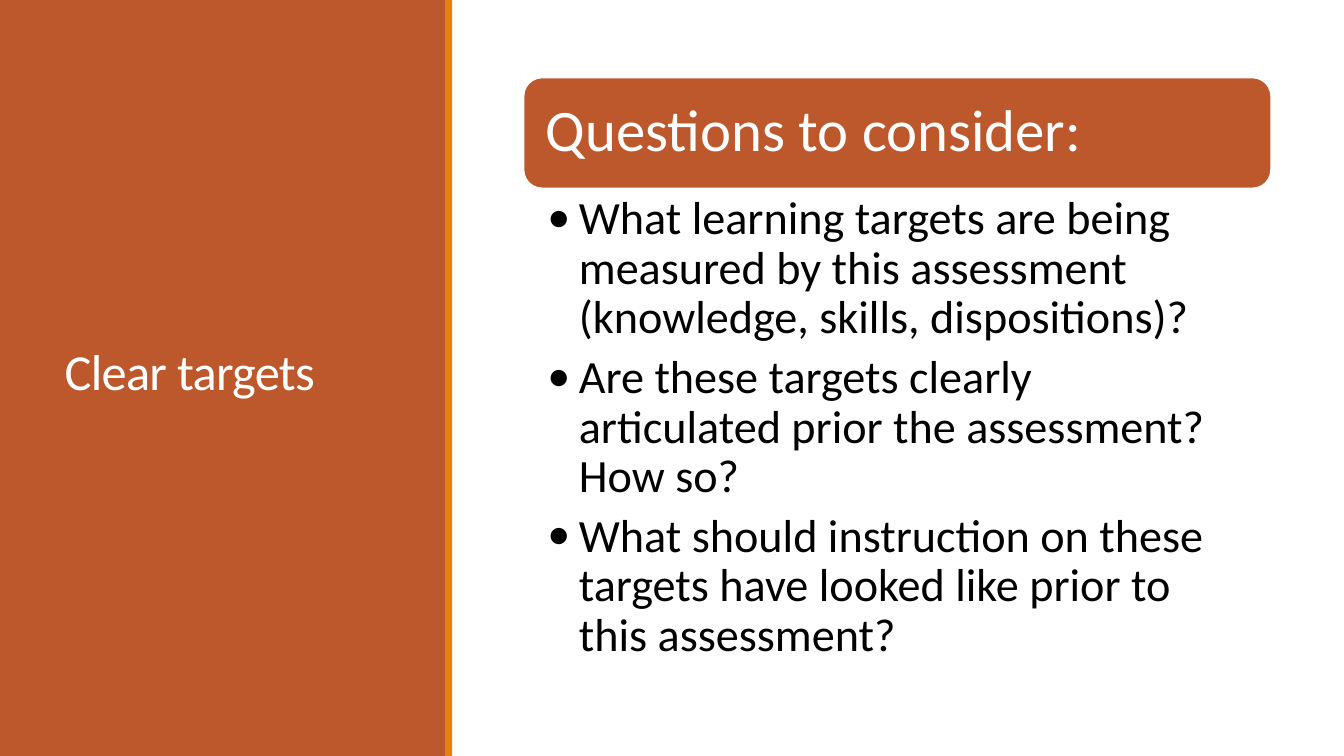
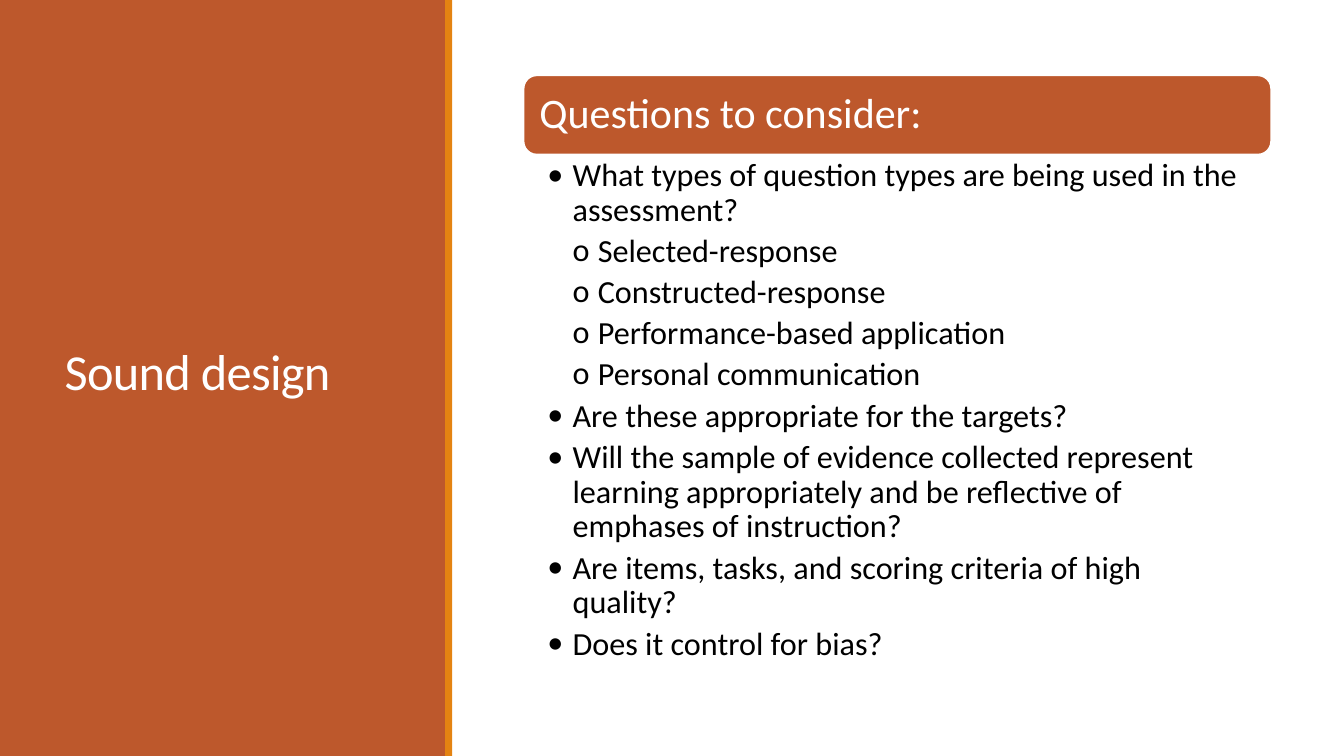
import pptx
import pptx.dml.color
import pptx.enum.shapes
import pptx.enum.text
import pptx.util
from lxml import etree
from pptx.oxml.ns import qn
from pptx.util import Pt

# Shared look
SLIDE_WIDTH, SLIDE_HEIGHT = 960, 540
RUST, ORANGE, WHITE, BLACK = "BD582C", "E48312", "FFFFFF", "000000"
FONT = "Calibri"
PANEL_WIDTH = 319
STRIPE_LEFT, STRIPE_WIDTH = 318, 5
CONTENT_LEFT, CONTENT_WIDTH = 374, 534
HEADING = "Questions to consider:"
BULLETS = "•o"  # one symbol per list level

# Content: questions are (level, text)
SLIDES = [
    {
        "title": "Clear targets",
        "heading": {"top": 55.4, "height": 79.2, "size": 42, "inset": 12},
        "list": {"height": 356, "size": 33, "indent": 22.5, "right": 24, "inset": 4.2},
        "questions": [
            (0, "What learning targets are being measured by this assessment "
                "(knowledge, skills, dispositions)?"),
            (0, "Are these targets clearly articulated prior the assessment? How so?"),
            (0, "What should instruction on these targets have looked like prior to "
                "this assessment?"),
        ],
    },
    {
        "title": "Sound design",
        "heading": {"top": 53.8, "height": 56.6, "size": 30, "inset": 8.6},
        "list": {"height": 381.6, "size": 23, "indent": 18, "right": 16.4, "inset": 2.9},
        "questions": [
            (0, "What types of question types are being used in the assessment?"),
            (1, "Selected-response"),
            (1, "Constructed-response"),
            (1, "Performance-based application"),
            (1, "Personal communication"),
            (0, "Are these appropriate for the targets?"),
            (0, "Will the sample of evidence collected represent learning "
                "appropriately and be reflective of emphases of instruction?"),
            (0, "Are items, tasks, and scoring criteria of high quality?"),
            (0, "Does it control for bias?"),
        ],
    },
]


def color(hex_code):
    return pptx.dml.color.RGBColor.from_string(hex_code)


def place(shape, left, top, width, height):
    shape.left, shape.top = Pt(left), Pt(top)
    shape.width, shape.height = Pt(width), Pt(height)


def set_frame(frame, anchor, left, top, right, bottom):
    frame.word_wrap = True
    frame.auto_size = pptx.enum.text.MSO_AUTO_SIZE.NONE
    frame.vertical_anchor = anchor
    frame.margin_left, frame.margin_top = Pt(left), Pt(top)
    frame.margin_right, frame.margin_bottom = Pt(right), Pt(bottom)


def style(paragraph, size, hex_code, line_spacing=0.9, space_after=0):
    paragraph.alignment = pptx.enum.text.PP_ALIGN.LEFT
    paragraph.line_spacing = line_spacing
    paragraph.space_before = Pt(0)
    paragraph.space_after = Pt(space_after)
    paragraph.font.name = FONT
    paragraph.font.size = Pt(size)
    paragraph.font.color.rgb = color(hex_code)


def set_bullet(paragraph, symbol, margin, hanging):
    properties = paragraph._p.get_or_add_pPr()
    properties.set("marL", str(Pt(margin)))
    properties.set("indent", str(-Pt(hanging)))
    font = etree.Element(qn("a:buFont"), typeface=FONT)
    character = etree.Element(qn("a:buChar"), char=symbol)
    run_defaults = properties.find(qn("a:defRPr"))
    run_defaults.addprevious(font)
    run_defaults.addprevious(character)


def add_filled(slide, preset, hex_code, left, top, width, height):
    shape = slide.shapes.add_shape(preset, Pt(left), Pt(top), Pt(width), Pt(height))
    shape.shadow.inherit = False
    shape.fill.solid()
    shape.fill.fore_color.rgb = color(hex_code)
    shape.line.fill.background()
    return shape


def add_side_panel(slide):
    rectangle = pptx.enum.shapes.MSO_SHAPE.RECTANGLE
    panel = add_filled(slide, rectangle, RUST, 0, 0, PANEL_WIDTH, SLIDE_HEIGHT)
    add_filled(slide, rectangle, ORANGE, STRIPE_LEFT, 0, STRIPE_WIDTH, SLIDE_HEIGHT)
    # The panel lies behind the title
    slide.shapes.title._element.addprevious(panel._element)


def fill_title(slide, text):
    title = slide.shapes.title
    place(title, 39, 41, 242.6, 454.4)
    title.text_frame.text = text
    set_frame(title.text_frame, pptx.enum.text.MSO_ANCHOR.MIDDLE, 7.2, 3.6, 7.2, 3.6)
    paragraph = title.text_frame.paragraphs[0]
    style(paragraph, 36, WHITE, line_spacing=0.85)
    paragraph.runs[0]._r.get_or_add_rPr().set("spc", "-50")


def add_heading(slide, top, height, size, inset):
    heading = add_filled(slide, pptx.enum.shapes.MSO_SHAPE.ROUNDED_RECTANGLE, RUST,
                         CONTENT_LEFT, top, CONTENT_WIDTH, height)
    heading.line.color.rgb = color(WHITE)
    heading.line.width = Pt(1.25)
    heading.text_frame.text = HEADING
    set_frame(heading.text_frame, pptx.enum.text.MSO_ANCHOR.MIDDLE, *[inset] * 4)
    style(heading.text_frame.paragraphs[0], size, WHITE)


def fill_questions(slide, questions, top, height, size, indent, right, inset):
    body = slide.placeholders[1]
    place(body, CONTENT_LEFT, top, CONTENT_WIDTH, height)
    frame = body.text_frame
    set_frame(frame, pptx.enum.text.MSO_ANCHOR.TOP, 17, inset, right, inset)
    frame.text = "\n".join(text for _, text in questions)
    for paragraph, (level, _) in zip(frame.paragraphs, questions):
        paragraph.level = level
        style(paragraph, size, BLACK, space_after=round(0.2 * size, 1))
        set_bullet(paragraph, BULLETS[level], indent * (level + 1), indent)


def main():
    deck = pptx.Presentation()
    deck.slide_width, deck.slide_height = Pt(SLIDE_WIDTH), Pt(SLIDE_HEIGHT)
    for content in SLIDES:
        slide = deck.slides.add_slide(deck.slide_layouts[1])
        heading = content["heading"]
        add_side_panel(slide)
        fill_title(slide, content["title"])
        add_heading(slide, **heading)
        fill_questions(slide, content["questions"],
                       top=heading["top"] + heading["height"], **content["list"])
    deck.save("out.pptx")


if __name__ == "__main__":
    main()
